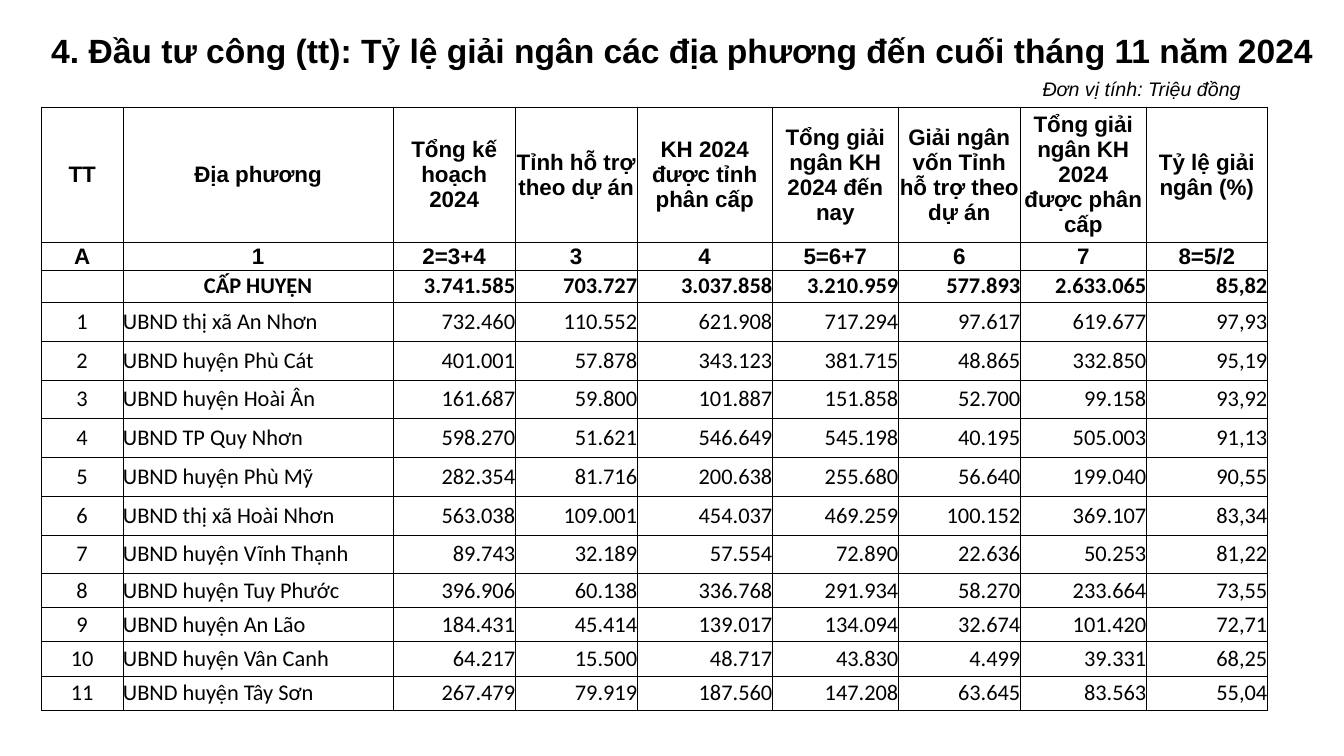
from lxml import etree
from pptx import Presentation
from pptx.dml.color import RGBColor
from pptx.enum.text import MSO_ANCHOR, MSO_AUTO_SIZE, PP_ALIGN
from pptx.oxml.ns import qn
from pptx.util import Inches, Pt

LEFT, CENTER, RIGHT, JUSTIFY = PP_ALIGN.LEFT, PP_ALIGN.CENTER, PP_ALIGN.RIGHT, PP_ALIGN.JUSTIFY
MIDDLE = MSO_ANCHOR.MIDDLE
GROW = MSO_AUTO_SIZE.SHAPE_TO_FIT_TEXT
PLAIN_STYLE = "{2D5ABB26-0587-4C30-8999-92F81FD0307C}"
BLACK = "000000"

TITLE = "4. Đầu tư công (tt): Tỷ lệ giải ngân các địa phương đến cuối tháng 11 năm 2024"
UNIT = "Đơn vị tính: Triệu đồng"
HEADINGS = [
    ("TT", "Địa phương", "Tổng kế hoạch 2024", "Tỉnh hỗ trợ theo dự án",
     "KH 2024 được tỉnh phân cấp", "Tổng giải ngân KH 2024 đến nay",
     "Giải ngân vốn Tỉnh hỗ trợ theo dự án",
     "Tổng giải ngân KH 2024\vđược phân cấp", "Tỷ lệ giải ngân (%)"),
    ("A", "1", "2=3+4", "3", "4", "5=6+7", "6", "7", "8=5/2"),
]
TOTAL = ("", "CẤP HUYỆN", "3.741.585", "703.727", "3.037.858", "3.210.959", "577.893", "2.633.065", "85,82")
LOCALITIES = [
    ("UBND thị xã An Nhơn", "732.460", "110.552", "621.908", "717.294", "97.617", "619.677", "97,93"),
    ("UBND huyện Phù Cát", "401.001", "57.878", "343.123", "381.715", "48.865", "332.850", "95,19"),
    ("UBND huyện Hoài Ân", "161.687", "59.800", "101.887", "151.858", "52.700", "99.158", "93,92"),
    ("UBND TP Quy Nhơn", "598.270", "51.621", "546.649", "545.198", "40.195", "505.003", "91,13"),
    ("UBND huyện Phù Mỹ", "282.354", "81.716", "200.638", "255.680", "56.640", "199.040", "90,55"),
    ("UBND thị xã Hoài Nhơn", "563.038", "109.001", "454.037", "469.259", "100.152", "369.107", "83,34"),
    ("UBND huyện Vĩnh Thạnh", "89.743", "32.189", "57.554", "72.890", "22.636", "50.253", "81,22"),
    ("UBND huyện Tuy Phước", "396.906", "60.138", "336.768", "291.934", "58.270", "233.664", "73,55"),
    ("UBND huyện An Lão", "184.431", "45.414", "139.017", "134.094", "32.674", "101.420", "72,71"),
    ("UBND huyện Vân Canh", "64.217", "15.500", "48.717", "43.830", "4.499", "39.331", "68,25"),
    ("UBND huyện Tây Sơn", "267.479", "79.919", "187.560", "147.208", "63.645", "83.563", "55,04"),
]
COLUMN_WIDTHS = [0.81, 2.68, 1.21, 1.21, 1.34, 1.25, 1.21, 1.25, 1.2]
ROW_HEIGHTS = [1.17, 0.26, 0.32] + [0.385] * 6 + [0.38] + [0.34] * 4


def color(value):
    return RGBColor.from_string(value)


def write(frame, text, size, font, align=LEFT, bold=False, italic=False):
    frame.text = text
    paragraph = frame.paragraphs[0]
    paragraph.alignment = align
    for run in paragraph.runs:
        run.font.size, run.font.name = Pt(size), font
        run.font.bold, run.font.italic = bold, italic
        run.font.color.rgb = color(BLACK)
    return paragraph


def add_plain_table(slide, left, top, widths, heights):
    table = slide.shapes.add_table(
        len(heights), len(widths), Inches(left), Inches(top),
        Inches(sum(widths)), Inches(sum(heights))).table
    table.first_row = table.horz_banding = False
    table._tbl.tblPr.find(qn("a:tableStyleId")).text = PLAIN_STYLE
    for column, width in zip(table.columns, widths):
        column.width = Inches(width)
    for row, height in zip(table.rows, heights):
        row.height = Inches(height)
    for cell in table.iter_cells():
        cell.fill.background()
        cell.vertical_anchor = MIDDLE
    return table


def add_borders(cell):
    properties = cell._tc.get_or_add_tcPr()
    for index, side in enumerate(("a:lnL", "a:lnR", "a:lnT", "a:lnB")):
        line = etree.Element(qn(side), w=str(Pt(0.5)))
        fill = etree.SubElement(line, qn("a:solidFill"))
        etree.SubElement(fill, qn("a:srgbClr"), val=BLACK)
        properties.insert(index, line)


def main():
    deck = Presentation()
    deck.slide_width, deck.slide_height = Inches(13.33), Inches(7.5)
    slide = deck.slides.add_slide(deck.slide_layouts[6])

    title = slide.shapes.add_textbox(Inches(0.41), Inches(0.25), Inches(12.76), Inches(0.91)).text_frame
    title.word_wrap = True
    title.auto_size = GROW
    write(title, TITLE, 24, "Arial", bold=True)

    unit = add_plain_table(slide, 10.24, 0.72, [2.32], [0.23, 0.39])
    write(unit.cell(0, 0).text_frame, UNIT, 14, "Arial", JUSTIFY, italic=True).space_after = Pt(12)

    numbered = [(str(number), *locality) for number, locality in enumerate(LOCALITIES, 1)]
    rows = HEADINGS + [TOTAL] + numbered
    disbursement = add_plain_table(slide, 0.41, 1.06, COLUMN_WIDTHS, ROW_HEIGHTS)
    total_row = len(HEADINGS)
    for r, row in enumerate(rows):
        heading = r < total_row
        name_align = CENTER if r <= total_row else LEFT
        for c, text in enumerate(row):
            cell = disbursement.cell(r, c)
            inset = Inches(0.01 if heading else 0)
            cell.margin_left = cell.margin_right = cell.margin_top = inset
            cell.margin_bottom = 0
            align = CENTER if heading or c == 0 else name_align if c == 1 else RIGHT
            write(cell.text_frame, text, 16, "Arial" if heading else "Calibri", align, bold=r <= total_row)
            add_borders(cell)

    deck.save("out.pptx")


if __name__ == "__main__":
    main()
